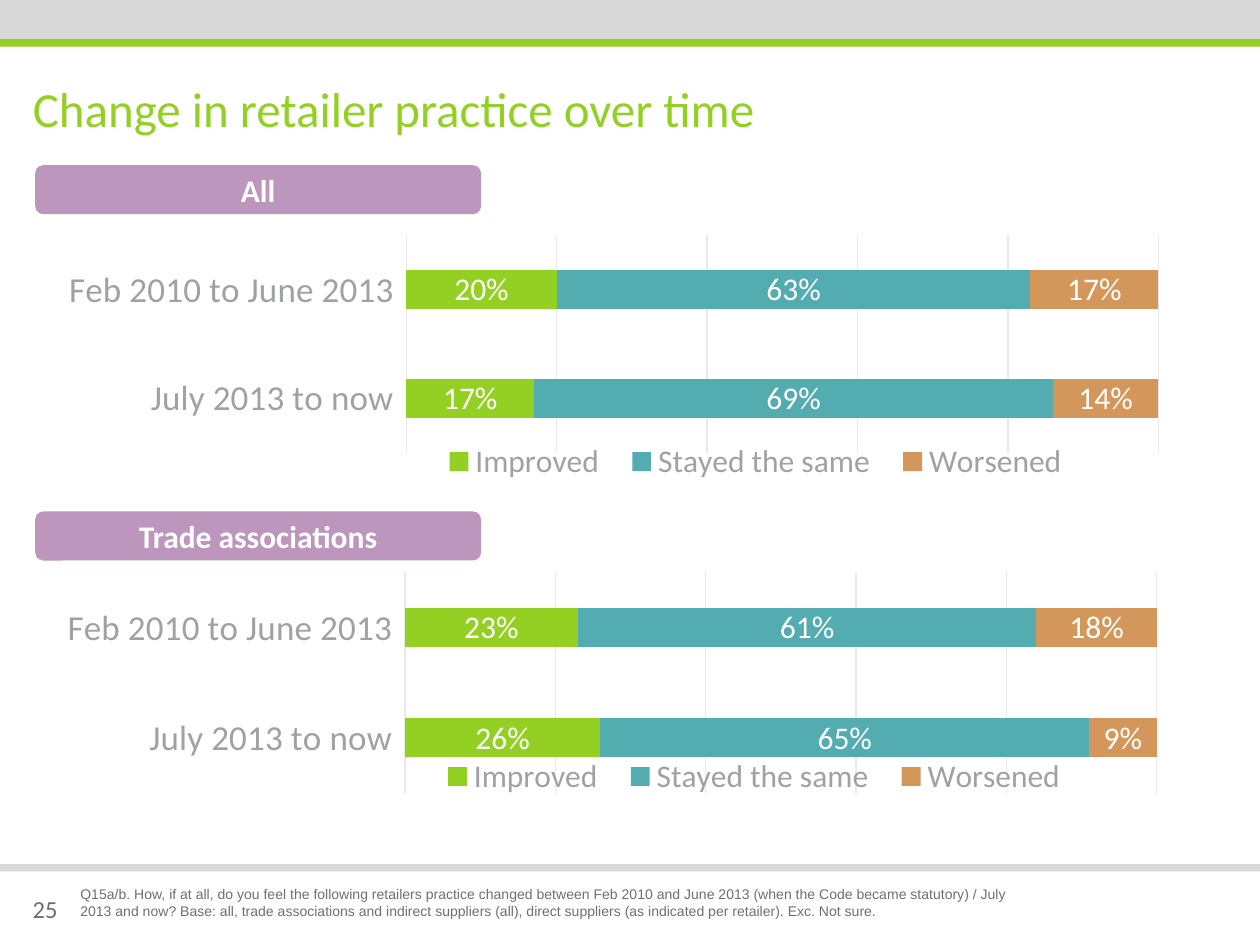
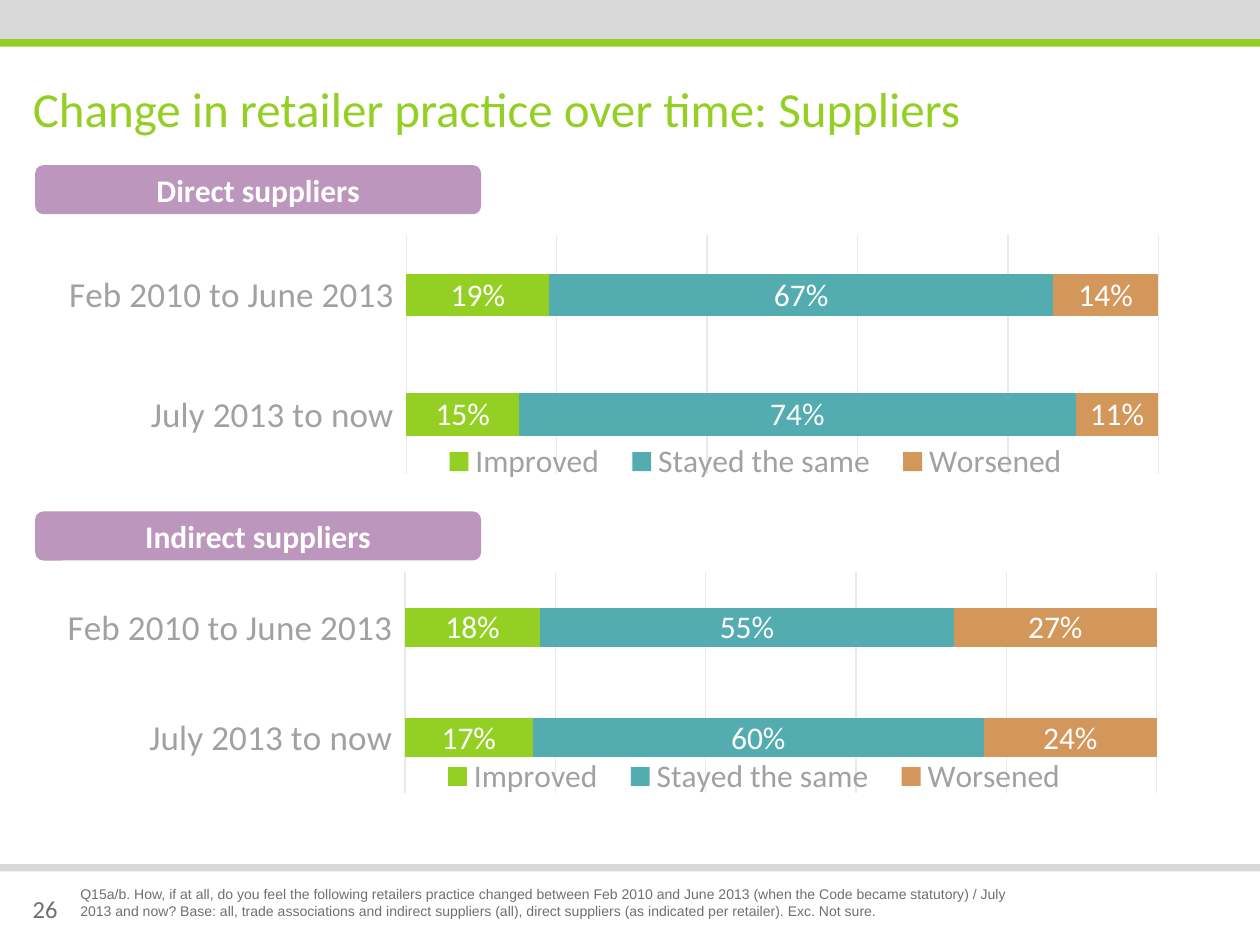
from lxml import etree
from pptx import Presentation
from pptx.chart.data import CategoryChartData
from pptx.dml.color import RGBColor
from pptx.enum.chart import XL_CHART_TYPE, XL_LEGEND_POSITION, XL_TICK_LABEL_POSITION, XL_TICK_MARK
from pptx.enum.shapes import MSO_SHAPE
from pptx.enum.text import MSO_ANCHOR, PP_ALIGN
from pptx.oxml.ns import qn
from pptx.util import Cm, Pt

RECTANGLE, ROUNDED = MSO_SHAPE.RECTANGLE, MSO_SHAPE.ROUNDED_RECTANGLE
STACKED_BAR = XL_CHART_TYPE.BAR_STACKED
LEGEND_BOTTOM = XL_LEGEND_POSITION.BOTTOM
NO_TICK, LABELS_LOW = XL_TICK_MARK.NONE, XL_TICK_LABEL_POSITION.LOW
MIDDLE, TOP = MSO_ANCHOR.MIDDLE, MSO_ANCHOR.TOP
LEFT, CENTER = PP_ALIGN.LEFT, PP_ALIGN.CENTER

GREEN = RGBColor(0x93, 0xD0, 0x23)
TEAL = RGBColor(0x53, 0xAC, 0xAF)
ORANGE = RGBColor(0xD3, 0x97, 0x5B)
PURPLE = RGBColor(0xBC, 0x96, 0xBC)
BAND_GREY = RGBColor(0xD9, 0xD9, 0xD9)
GRID_GREY = RGBColor(0xE9, 0xE9, 0xEA)
LABEL_GREY = RGBColor(0xA0, 0xA1, 0xA3)
TEXT_GREY = RGBColor(0x6D, 0x6F, 0x71)
WHITE = RGBColor(0xFF, 0xFF, 0xFF)

# Text styles: font attributes plus colour
TITLE = {"name": "Calibri", "size": Pt(28), "color": GREEN}
HEADING = {"name": "Calibri", "size": Pt(18), "bold": True, "color": WHITE}
NUMBER = {"name": "Calibri", "size": Pt(14), "color": TEXT_GREY}
NOTE = {"name": "Arial", "size": Pt(8), "color": TEXT_GREY}
CHART_BASE = {"name": "Calibri", "size": Pt(10), "color": TEXT_GREY}
CATEGORY = {"name": "Calibri", "size": Pt(20), "color": LABEL_GREY}
LEGEND = {"name": "Calibri", "size": Pt(18), "color": LABEL_GREY}
VALUE = {"name": "Calibri", "size": Pt(18), "color": WHITE}

PERIODS = ["Feb 2010 to June 2013", "July 2013 to now"]
ANSWERS = {"Improved": GREEN, "Stayed the same": TEAL, "Worsened": ORANGE}
BANDS = [(0, 0.79, BAND_GREY), (17.42, 0.15, BAND_GREY), (0.79, 0.15, GREEN)]
QUESTION = (
    "Q15a/b. How, if at all, do you feel the following retailers practice changed between "
    "Feb 2010 and June 2013 (when the Code became statutory) / July 2013 and now? Base: all, "
    "trade associations and indirect suppliers (all), direct suppliers (as indicated per "
    "retailer). Exc. Not sure."
)

# Upper and lower half of a page: heading top, chart box, legend top
HALVES = [
    (3.33, (0.41, 4.52, 24.1, 5.41), 0.8),
    (10.31, (0.38, 11.33, 24.1, 5), 0.78),
]

# Each panel: heading, plot height, values per answer
PAGES = [
    ("Change in retailer practice over time", 25, 19.74, [
        ("All", 0.81, [(0.2, 0.17), (0.63, 0.69), (0.17, 0.14)]),
        ("Trade associations", 0.89, [(0.23, 0.26), (0.61, 0.65), (0.18, 0.09)]),
    ]),
    ("Change in retailer practice over time: Suppliers", 26, 19.33, [
        ("Direct suppliers", 0.89, [(0.19, 0.15), (0.67, 0.74), (0.14, 0.11)]),
        ("Indirect suppliers", 0.89, [(0.18, 0.17), (0.55, 0.6), (0.27, 0.24)]),
    ]),
]


def style_font(font, style):
    for name, value in style.items():
        if name == "color":
            font.color.rgb = value
        else:
            setattr(font, name, value)


def place_part(part, index, **fractions):
    """Give a chart part a fixed place, in fractions of the chart."""
    for old in part.findall(qn("c:layout")):
        part.remove(old)
    layout = etree.Element(qn("c:layout"))
    manual = etree.SubElement(layout, qn("c:manualLayout"))
    for name, value in fractions.items():
        etree.SubElement(manual, qn(f"c:{name}")).set("val", str(value))
    part.insert(index, layout)


deck = Presentation()
deck.slide_width, deck.slide_height = Cm(25.4), Cm(19.05)
title_only = deck.slide_layouts[5]

for title, number, note_width, panels in PAGES:
    page = deck.slides.add_slide(title_only)

    # Bands
    for top, height, color in BANDS:
        band = page.shapes.add_shape(RECTANGLE, 0, Cm(top), deck.slide_width, Cm(height))
        band.shadow.inherit = False
        band.fill.solid()
        band.fill.fore_color.rgb = color
        band.line.fill.background()

    # Title, page number and question
    heading = page.shapes.title
    heading.left, heading.top, heading.width, heading.height = Cm(0.41), Cm(1.52), Cm(24.61), Cm(1.3)
    number_box = page.shapes.add_textbox(Cm(0.41), Cm(17.65), Cm(1.96), Cm(1.32))
    note_box = page.shapes.add_textbox(Cm(1.37), Cm(17.73), Cm(note_width), Cm(0.94))
    for box, text, style, anchor in [
        (heading, title, TITLE, MIDDLE),
        (number_box, str(number), NUMBER, MIDDLE),
        (note_box, QUESTION, NOTE, TOP),
    ]:
        frame = box.text_frame
        frame.word_wrap = True
        frame.vertical_anchor = anchor
        frame.text = text
        frame.paragraphs[0].alignment = LEFT
        style_font(frame.paragraphs[0].runs[0].font, style)

    for (label, plot_height, values), (label_top, chart_box, legend_top) in zip(panels, HALVES):
        # Chart
        data = CategoryChartData(number_format="0%")
        data.categories = PERIODS
        for answer, shares in zip(ANSWERS, values):
            data.add_series(answer, shares)
        chart = page.shapes.add_chart(STACKED_BAR, *map(Cm, chart_box), data).chart
        chart.has_title = False
        style_font(chart.font, CHART_BASE)

        # Bars
        plot = chart.plots[0]
        plot.gap_width, plot.overlap = 182, 100
        plot.vary_by_categories = False
        for series, color in zip(plot.series, ANSWERS.values()):
            series.format.fill.solid()
            series.format.fill.fore_color.rgb = color
            labels = series.data_labels
            labels.show_value = True
            labels.number_format, labels.number_format_is_linked = "0%", False
            style_font(labels.font, VALUE)

        # Axes
        periods, shares = chart.category_axis, chart.value_axis
        periods.reverse_order = True
        periods.major_tick_mark = periods.minor_tick_mark = NO_TICK
        periods.tick_label_position = LABELS_LOW
        style_font(periods.tick_labels.font, CATEGORY)
        shares.minimum_scale, shares.maximum_scale, shares.major_unit = 0, 1, 0.2
        shares.visible = False
        shares.has_major_gridlines = True
        for line in (periods.format.line, shares.major_gridlines.format.line):
            line.color.rgb = GRID_GREY
            line.width = Pt(0.75)

        # Legend and fixed places
        chart.has_legend = True
        chart.legend.position = LEGEND_BOTTOM
        chart.legend.include_in_layout = False
        style_font(chart.legend.font, LEGEND)
        place_part(chart.element.find(".//" + qn("c:plotArea")), 0, layoutTarget="inner",
                   xMode="edge", yMode="edge", x=0.323, y=0.042, w=0.629, h=plot_height)
        place_part(chart.element.find(".//" + qn("c:legend")), 1,
                   xMode="edge", yMode="edge", x=0.34, y=legend_top, w=0.55, h=0.17)

        # Panel heading
        tab = page.shapes.add_shape(ROUNDED, Cm(0.71), Cm(label_top), Cm(8.99), Cm(0.99))
        tab.shadow.inherit = False
        tab.fill.solid()
        tab.fill.fore_color.rgb = PURPLE
        tab.line.fill.background()
        tab.text_frame.vertical_anchor = MIDDLE
        tab.text_frame.text = label
        para = tab.text_frame.paragraphs[0]
        para.alignment = CENTER
        style_font(para.runs[0].font, HEADING)

deck.save("out.pptx")
